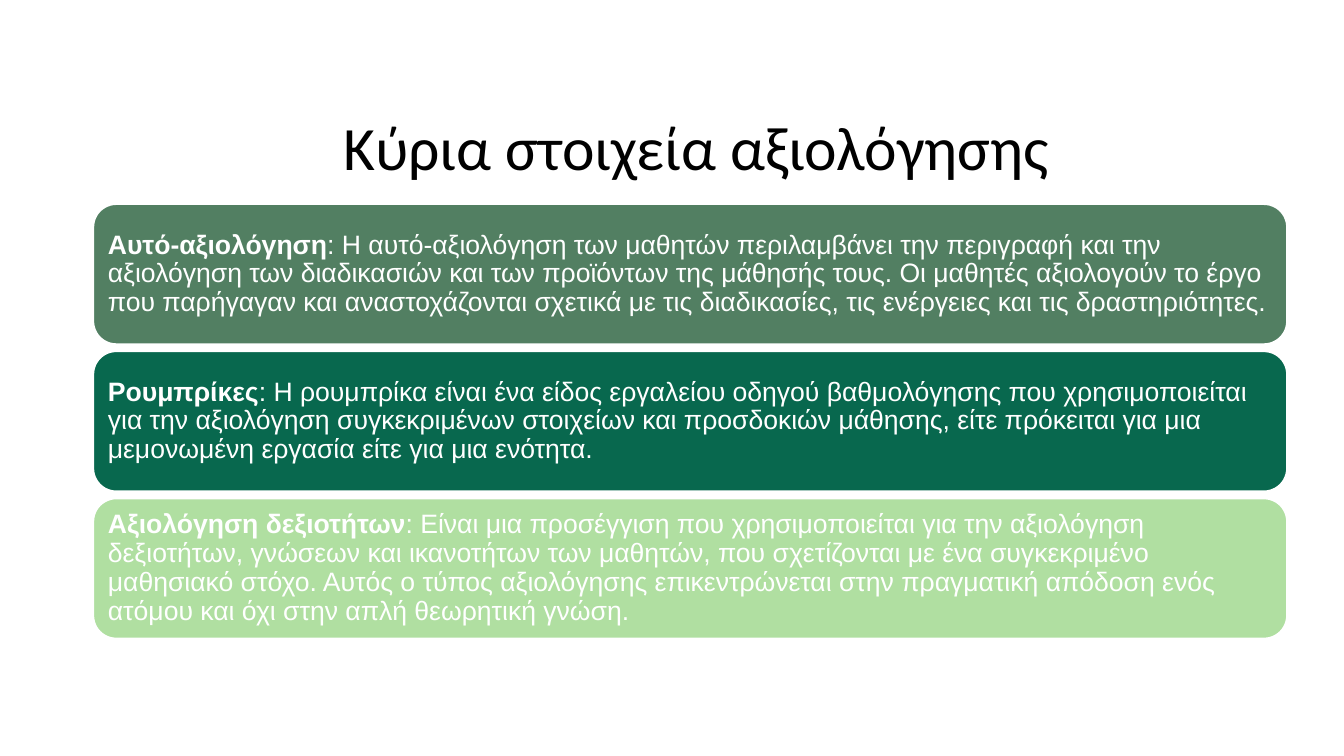
"""Build a slide on the main elements of assessment."""
from collections import namedtuple

from pptx import Presentation
from pptx.dml.color import RGBColor as Color
from pptx.enum.shapes import MSO_SHAPE as Shape
from pptx.enum.text import MSO_ANCHOR as Anchor, PP_ALIGN as Align
from pptx.util import Inches, Pt

Theme = namedtuple("Theme", "black white greens title body head text")
theme = Theme(
    black=Color.from_string("000000"),
    white=Color.from_string("FFFFFF"),
    greens=[Color.from_string(c) for c in ("527F62", "08684E", "B0DFA1")],
    title=Pt(44),
    body=Pt(19),
    head="Calibri",
    text="Arial",
)

cards = [
    ("Αυτό-αξιολόγηση",
     ": Η αυτό-αξιολόγηση των μαθητών περιλαμβάνει την περιγραφή και την "
     "αξιολόγηση των διαδικασιών και των προϊόντων της μάθησής τους. Οι μαθητές "
     "αξιολογούν το έργο που παρήγαγαν και αναστοχάζονται σχετικά με τις "
     "διαδικασίες, τις ενέργειες και τις δραστηριότητες."),
    ("Ρουμπρίκες",
     ": Η ρουμπρίκα είναι ένα είδος εργαλείου οδηγού βαθμολόγησης που "
     "χρησιμοποιείται για την αξιολόγηση συγκεκριμένων στοιχείων και προσδοκιών "
     "μάθησης, είτε πρόκειται για μια μεμονωμένη εργασία είτε για μια ενότητα."),
    ("Αξιολόγηση δεξιοτήτων",
     ": Είναι μια προσέγγιση που χρησιμοποιείται για την αξιολόγηση δεξιοτήτων, "
     "γνώσεων και ικανοτήτων των μαθητών, που σχετίζονται με ένα συγκεκριμένο "
     "μαθησιακό στόχο. Αυτός ο τύπος αξιολόγησης επικεντρώνεται στην πραγματική "
     "απόδοση ενός ατόμου και όχι στην απλή θεωρητική γνώση."),
]

deck = Presentation()
deck.slide_width, deck.slide_height = Inches(13.33), Inches(7.5)
slide = deck.slides.add_slide(deck.slide_layouts[5])

title = slide.shapes.title
title.left, title.top = Inches(1.16), Inches(0.82)
title.width, title.height = Inches(11.5), Inches(1.35)
title.text_frame.text = "Κύρια στοιχεία αξιολόγησης"
title.text_frame.vertical_anchor = Anchor.MIDDLE
para = title.text_frame.paragraphs[0]
para.alignment = Align.CENTER
para.line_spacing = 0.9
para.font.name, para.font.size = theme.head, theme.title
para.font.color.rgb = theme.black

left, top, wide, high = 0.92, 2.02, 11.85, 1.4
step, inset = 1.46, 0.07
for i, ((term, text), green) in enumerate(zip(cards, theme.greens)):
    y = top + i * step
    card = slide.shapes.add_shape(
        Shape.ROUNDED_RECTANGLE,
        Inches(left), Inches(y), Inches(wide), Inches(high))
    card.shadow.inherit = False
    card.fill.solid()
    card.fill.fore_color.rgb = green
    card.line.color.rgb = theme.white
    card.line.width = Pt(2)

    label = slide.shapes.add_textbox(
        Inches(left + inset), Inches(y + inset),
        Inches(wide - 2 * inset), Inches(high - 2 * inset))
    frame = label.text_frame
    frame.word_wrap = True
    frame.vertical_anchor = Anchor.MIDDLE
    frame.margin_left = frame.margin_right = Inches(0.08)
    frame.margin_top = frame.margin_bottom = Inches(0.08)
    para = frame.paragraphs[0]
    para.alignment = Align.LEFT
    para.line_spacing = 0.9
    para.font.name, para.font.size = theme.text, theme.body
    para.font.color.rgb = theme.white
    lead = para.add_run()
    lead.text = term
    lead.font.bold = True
    para.add_run().text = text

deck.save("out.pptx")
